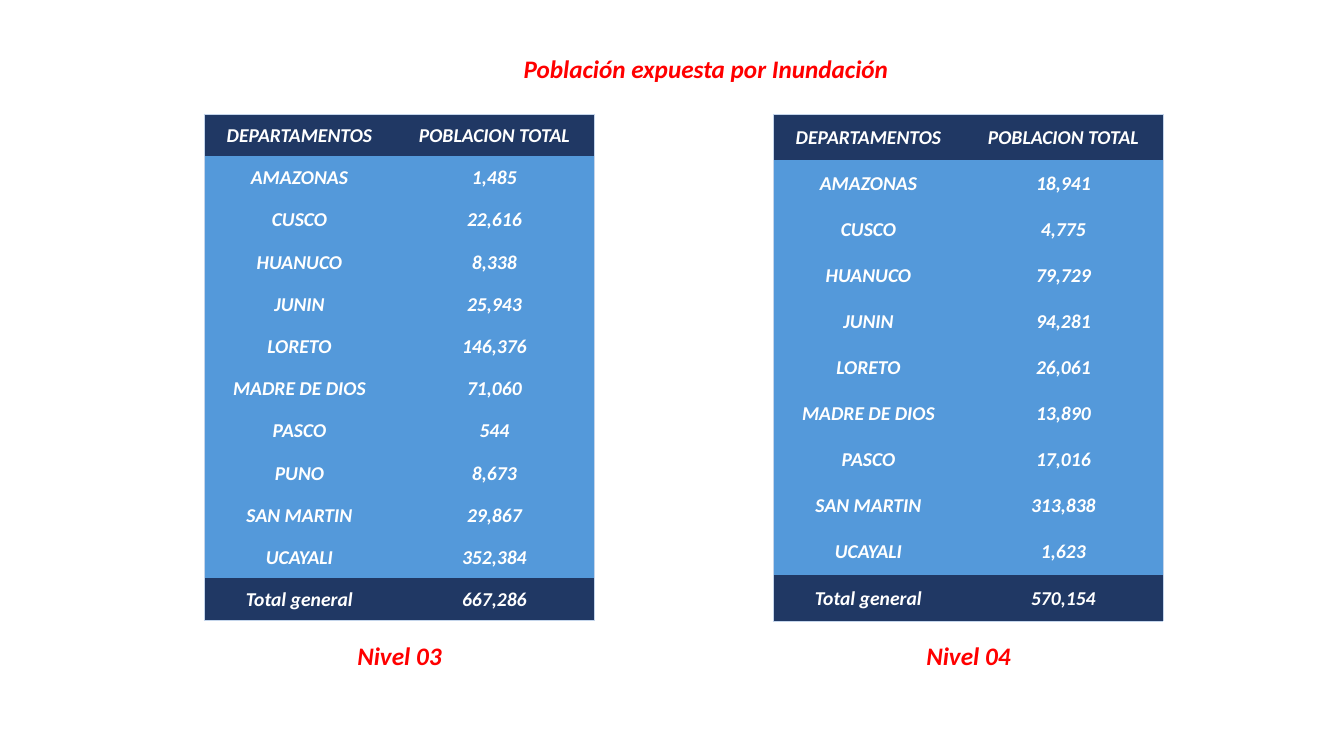
from lxml import etree
from pptx import Presentation, util as u
from pptx.dml.color import RGBColor
from pptx.enum import text
from pptx.oxml.ns import qn

EMU_PER_PX = 914400 / 100.8
NAVY, BLUE, WHITE, RED, EDGE = "203864", "5499DA", "FFFFFF", "FF0000", "C4D5EB"
TABLE_TOP, TABLE_HEIGHT = 114, 507
COLUMN_WIDTHS = (191, 199)
HEADER = ("DEPARTAMENTOS", "POBLACION TOTAL")

LEVELS = [
    ("Nivel 03", 204, {
        "AMAZONAS": 1485, "CUSCO": 22616, "HUANUCO": 8338, "JUNIN": 25943,
        "LORETO": 146376, "MADRE DE DIOS": 71060, "PASCO": 544, "PUNO": 8673,
        "SAN MARTIN": 29867, "UCAYALI": 352384}),
    ("Nivel 04", 773, {
        "AMAZONAS": 18941, "CUSCO": 4775, "HUANUCO": 79729, "JUNIN": 94281,
        "LORETO": 26061, "MADRE DE DIOS": 13890, "PASCO": 17016,
        "SAN MARTIN": 313838, "UCAYALI": 1623}),
]


def px(n):
    return u.Emu(round(n * EMU_PER_PX))


def rgb(value):
    return RGBColor.from_string(value)


def write(tf, content, size, color):
    p = tf.paragraphs[0]
    p.alignment = text.PP_ALIGN.CENTER
    r = p.add_run()
    r.text = content
    r.font.name = "Calibri"
    r.font.size = u.Pt(size)
    r.font.bold = r.font.italic = True
    r.font.color.rgb = rgb(color)


def add_label(s, content, x, y, w, h, wrap=True):
    tf = s.shapes.add_textbox(px(x), px(y), px(w), px(h)).text_frame
    tf.word_wrap = wrap
    tf.auto_size = text.MSO_AUTO_SIZE.SHAPE_TO_FIT_TEXT
    write(tf, content, 18, RED)


def set_borders(cell, outer):
    """Draw the sides named in outer and clear the other ones."""
    tc_pr = cell._tc.get_or_add_tcPr()
    for side in "LRTB":
        ln = etree.SubElement(tc_pr, qn(f"a:ln{side}"), w=str(u.Pt(0.5)))
        if side in outer:
            fill = etree.SubElement(ln, qn("a:solidFill"))
            etree.SubElement(fill, qn("a:srgbClr"), val=EDGE)
        else:
            etree.SubElement(ln, qn("a:noFill"))


def add_population_table(s, x, population):
    rows = [HEADER]
    rows += [(name, f"{count:,}") for name, count in population.items()]
    rows.append(("Total general", f"{sum(population.values()):,}"))
    last = len(rows) - 1
    table = s.shapes.add_table(
        len(rows), len(HEADER), px(x), px(TABLE_TOP),
        px(sum(COLUMN_WIDTHS)), px(TABLE_HEIGHT)).table
    table.horz_banding = False
    for column, width in zip(table.columns, COLUMN_WIDTHS):
        column.width = px(width)
    for i, values in enumerate(rows):
        table.rows[i].height = px(TABLE_HEIGHT / len(rows))
        for j, value in enumerate(values):
            cell = table.cell(i, j)
            cell.vertical_anchor = text.MSO_ANCHOR.MIDDLE
            cell.margin_left = cell.margin_right = cell.margin_top = px(1)
            cell.margin_bottom = 0
            set_borders(cell, "LR"[j] + {0: "T", last: "B"}.get(i, ""))
            cell.fill.solid()
            cell.fill.fore_color.rgb = rgb(NAVY if i in (0, last) else BLUE)
            write(cell.text_frame, value, 14, WHITE)


def main():
    prs = Presentation()
    prs.slide_width, prs.slide_height = px(1344), px(756)
    s = prs.slides.add_slide(prs.slide_layouts[6])
    add_label(s, "Población expuesta por Inundación", 512, 48, 388, 40, wrap=False)
    for level, x, population in LEVELS:
        add_population_table(s, x, population)
        add_label(s, level, x + 140, 635, 111, 40)
    prs.save("out.pptx")


if __name__ == "__main__":
    main()
